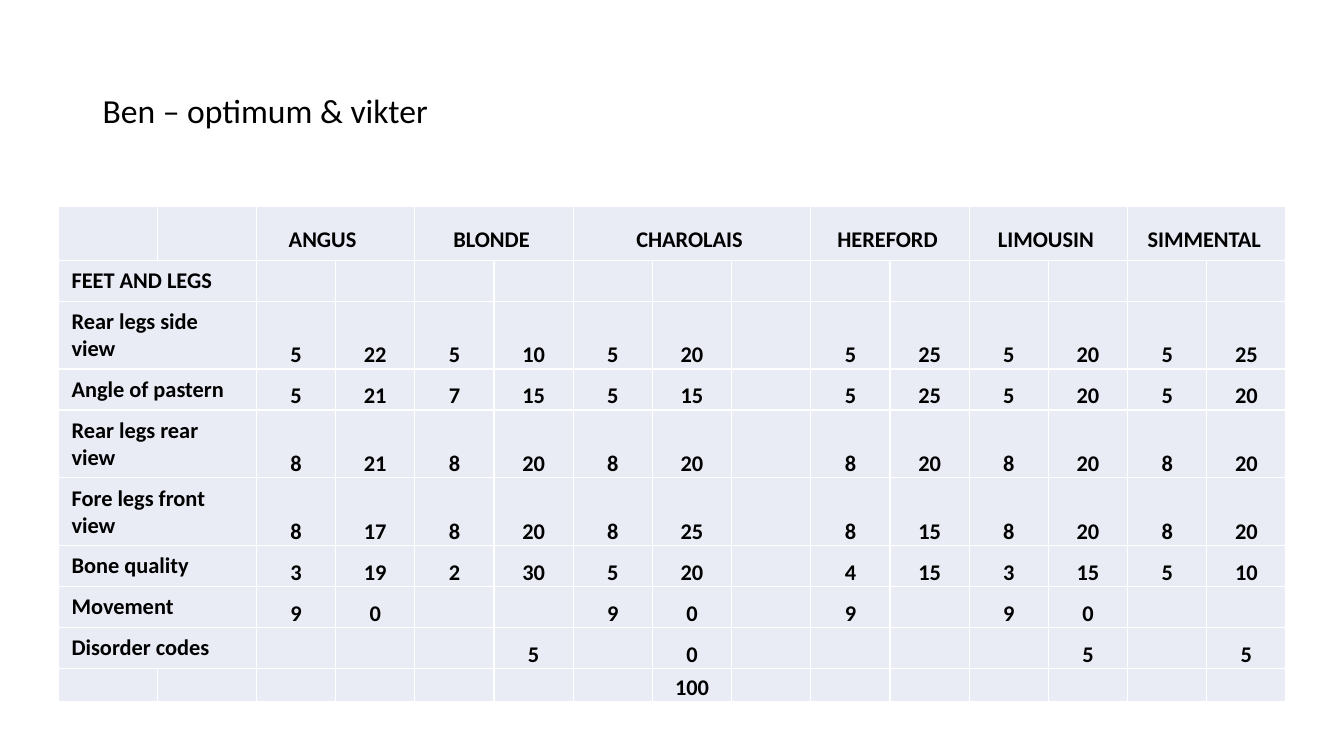
import pptx
import pptx.dml.color
import pptx.enum.text
import pptx.oxml
import pptx.oxml.ns
import pptx.util
from dataclasses import dataclass


@dataclass(frozen=True)
class Theme:
    font: str = "Calibri"
    ink: str = "000000"
    cell: str = "E9EBF5"
    border: str = "FFFFFF"
    title_size: int = 24
    table_size: int = 16


THEME = Theme()
SLIDE_WIDTH, SLIDE_HEIGHT = 13.33, 7.5
TABLE_WIDTH, TABLE_HEIGHT = 12.18, 4.86
COLUMN_UNITS = [1.25] * 2 + [1] * 13
HEADER_HEIGHT, ROW_HEIGHT = 0.53, 0.33
LABEL_INSETS = (0.13, 0.07, 0.13, 0.07)
HEADING_INSETS = (0.13, 0.07, 0.18, 0.07)
ANGUS_INSETS = (0.13, 0.07, 0.39, 0.07)
NUMBER_INSETS = (0.01, 0.01, 0.01, 0)

# Breed name, columns spanned, insets
BREEDS = [
    ("ANGUS", 2, ANGUS_INSETS),
    ("BLONDE", 2, HEADING_INSETS),
    ("CHAROLAIS", 3, HEADING_INSETS),
    ("HEREFORD", 2, HEADING_INSETS),
    ("LIMOUSIN", 2, HEADING_INSETS),
    ("SIMMENTAL", 2, HEADING_INSETS),
]
# Trait, then optimum and weight by column; Charolais has a third, empty column
TRAITS = [
    ("FEET AND LEGS", ",,,,,,,,,,,,"),
    ("Rear legs side view", "5,22,5,10,5,20,,5,25,5,20,5,25"),
    ("Angle of pastern", "5,21,7,15,5,15,,5,25,5,20,5,20"),
    ("Rear legs rear view", "8,21,8,20,8,20,,8,20,8,20,8,20"),
    ("Fore legs front view", "8,17,8,20,8,25,,8,15,8,20,8,20"),
    ("Bone quality", "3,19,2,30,5,20,,4,15,3,15,5,10"),
    ("Movement", "9,0,,,9,0,,9,,9,0,,"),
    ("Disorder codes", ",,,5,,0,,,,,5,,5"),
    ("", ",,,,,100,,,,,,,"),
]
LEFT = pptx.enum.text.PP_ALIGN.LEFT
CENTER = pptx.enum.text.PP_ALIGN.CENTER


def color(value):
    return pptx.dml.color.RGBColor.from_string(value)


def format_runs(para, size, bold=False):
    for span in para.runs:
        span.font.name = THEME.font
        span.font.size = pptx.util.Pt(size)
        span.font.bold = bold
        span.font.color.rgb = color(THEME.ink)


def add_title(page, text, left, top, width, height):
    """Place a title; all lengths are shares of the slide's size."""
    box = page.shapes.add_textbox(
        pptx.util.Inches(left * SLIDE_WIDTH), pptx.util.Inches(top * SLIDE_HEIGHT),
        pptx.util.Inches(width * SLIDE_WIDTH), pptx.util.Inches(height * SLIDE_HEIGHT))
    frame = box.text_frame
    frame.word_wrap = True
    frame.vertical_anchor = pptx.enum.text.MSO_ANCHOR.MIDDLE
    frame.text = text
    frame.paragraphs[0].line_spacing = 0.9
    format_runs(frame.paragraphs[0], THEME.title_size)


def style_cell(cell):
    """Give a cell its border, fill and tight insets."""
    properties = cell._tc.get_or_add_tcPr()
    for side in ("lnL", "lnR", "lnT", "lnB"):
        properties.append(pptx.oxml.parse_xml(
            f'<a:{side} {pptx.oxml.ns.nsdecls("a")} w="12700"><a:solidFill>'
            f'<a:srgbClr val="{THEME.border}"/></a:solidFill></a:{side}>'))
    cell.fill.solid()
    cell.fill.fore_color.rgb = color(THEME.cell)
    cell.vertical_anchor = pptx.enum.text.MSO_ANCHOR.BOTTOM
    set_insets(cell, NUMBER_INSETS)


def set_insets(cell, insets):
    (cell.margin_left, cell.margin_top,
     cell.margin_right, cell.margin_bottom) = map(pptx.util.Inches, insets)


def write_cell(cell, text, alignment, insets):
    set_insets(cell, insets)
    cell.text_frame.text = text
    para = cell.text_frame.paragraphs[0]
    para.alignment = alignment
    format_runs(para, THEME.table_size, bold=True)


def add_grid(page, left, top):
    """Add the styled, empty table; left and top are shares of the slide's size."""
    holder = page.shapes.add_table(
        len(TRAITS) + 1, len(COLUMN_UNITS),
        pptx.util.Inches(left * SLIDE_WIDTH), pptx.util.Inches(top * SLIDE_HEIGHT),
        pptx.util.Inches(TABLE_WIDTH), pptx.util.Inches(TABLE_HEIGHT))
    table = holder.table
    table.first_row = table.horz_banding = False
    unit = TABLE_WIDTH / sum(COLUMN_UNITS)
    for column, units in zip(table.columns, COLUMN_UNITS):
        column.width = pptx.util.Inches(units * unit)
    for index, row in enumerate(table.rows):
        row.height = pptx.util.Inches(ROW_HEIGHT if index else HEADER_HEIGHT)
    holder.height = pptx.util.Inches(TABLE_HEIGHT)
    for cell in table.iter_cells():
        style_cell(cell)
    return table


def fill_breeds(table):
    column = 2
    for name, columns, insets in BREEDS:
        cell = table.cell(0, column)
        cell.merge(table.cell(0, column + columns - 1))
        write_cell(cell, name, CENTER, insets)
        column += columns


def fill_traits(table):
    for row, (trait, values) in enumerate(TRAITS, start=1):
        if trait:
            cell = table.cell(row, 0)
            cell.merge(table.cell(row, 1))
            write_cell(cell, trait, LEFT, LABEL_INSETS)
        for column, value in enumerate(values.split(","), start=2):
            if value:
                write_cell(table.cell(row, column), value, CENTER, NUMBER_INSETS)


def main():
    deck = pptx.Presentation()
    deck.slide_width = pptx.util.Inches(SLIDE_WIDTH)
    deck.slide_height = pptx.util.Inches(SLIDE_HEIGHT)
    page = deck.slides.add_slide(deck.slide_layouts[6])
    add_title(page, "Ben – optimum & vikter", 0.069, 0.053, 0.863, 0.193)
    table = add_grid(page, 0.0435, 0.2735)
    fill_breeds(table)
    fill_traits(table)
    deck.save("out.pptx")


if __name__ == "__main__":
    main()
